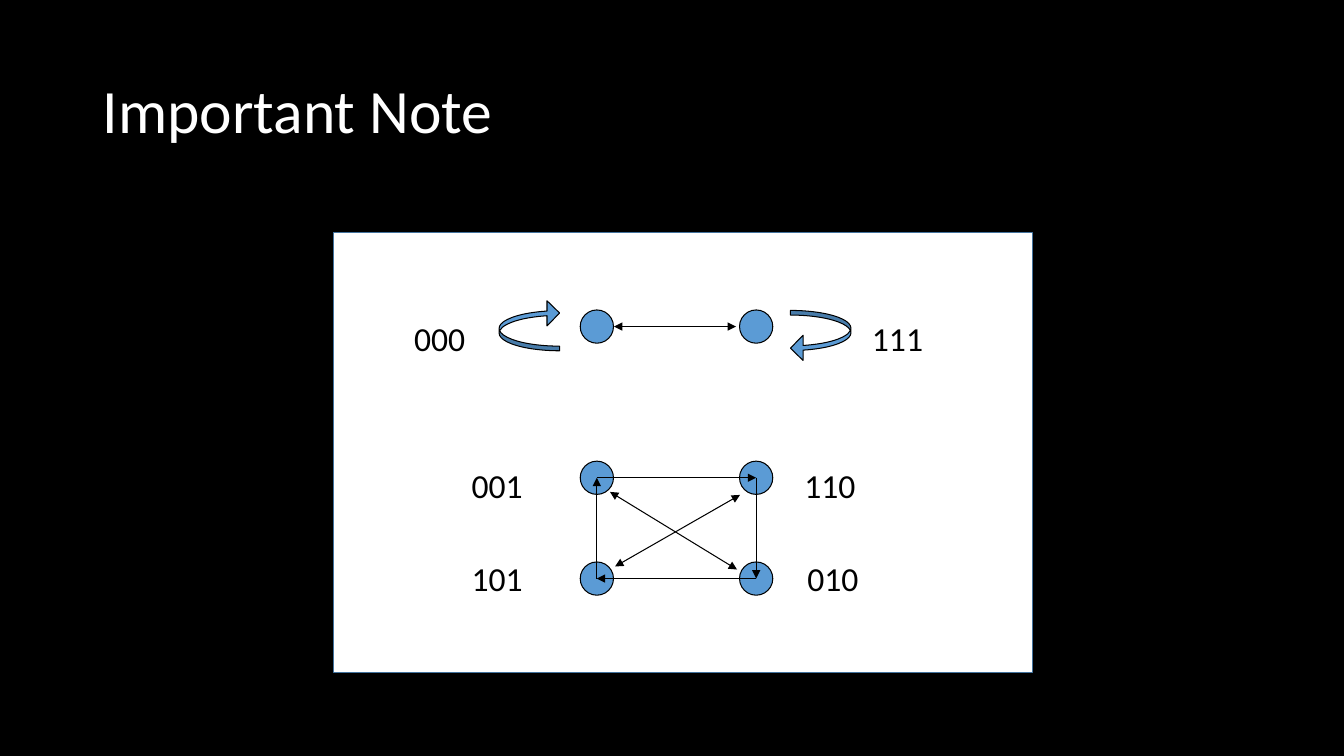
from dataclasses import dataclass

from lxml import etree
from pptx import Presentation
from pptx.dml.color import RGBColor
from pptx.enum.shapes import MSO_CONNECTOR, MSO_SHAPE
from pptx.enum.text import MSO_ANCHOR, PP_ALIGN
from pptx.oxml.ns import qn
from pptx.util import Inches, Pt

STRAIGHT = MSO_CONNECTOR.STRAIGHT
RECTANGLE = MSO_SHAPE.RECTANGLE
NODE = MSO_SHAPE.FLOWCHART_CONNECTOR
LOOP = MSO_SHAPE.CURVED_LEFT_ARROW
MIDDLE = MSO_ANCHOR.MIDDLE
LEFT = PP_ALIGN.LEFT
TITLE_ONLY = 5


@dataclass(frozen=True)
class Theme:
    font: str = "Calibri"
    black: RGBColor = RGBColor(0x00, 0x00, 0x00)
    white: RGBColor = RGBColor(0xFF, 0xFF, 0xFF)
    blue: RGBColor = RGBColor(0x5B, 0x9B, 0xD5)
    border: RGBColor = RGBColor(0x43, 0x73, 0x9E)
    title_size: float = 44
    label_size: float = 24
    thin: float = 0.75
    panel_line: float = 1


class StateSlide:
    """Draws a state-transition slide in one theme."""

    def __init__(self, prs, theme):
        self.theme = theme
        self.slide = prs.slides.add_slide(prs.slide_layouts[TITLE_ONLY])
        self.slide.background.fill.solid()
        self.slide.background.fill.fore_color.rgb = theme.black

    def set_text(self, tf, text, size, color):
        tf.word_wrap = True
        tf.text = text
        p = tf.paragraphs[0]
        p.alignment = LEFT
        font = p.runs[0].font
        font.name, font.size, font.color.rgb = self.theme.font, Pt(size), color
        return p

    def title(self, text, *box):
        s = self.slide.shapes.title
        s.left, s.top, s.width, s.height = map(Inches, box)
        s.text_frame.vertical_anchor = MIDDLE
        p = self.set_text(s.text_frame, text, self.theme.title_size, self.theme.white)
        p.line_spacing = 0.9

    def shape(self, kind, box, fill, line, width):
        s = self.slide.shapes.add_shape(kind, *map(Inches, box))
        s.shadow.inherit = False
        s.fill.solid()
        s.fill.fore_color.rgb = fill
        s.line.color.rgb = line
        s.line.width = Pt(width)
        return s

    def panel(self, *box):
        t = self.theme
        self.shape(RECTANGLE, box, t.white, t.border, t.panel_line)

    def node(self, x, y, size=0.33):
        t = self.theme
        box = (x - size / 2, y - size / 2, size, size)
        self.shape(NODE, box, t.blue, t.black, t.thin)

    def loop(self, left, top, rotation=0):
        t = self.theme
        s = self.shape(LOOP, (left, top, 0.6, 0.5), t.blue, t.black, t.thin)
        s.rotation = rotation
        for i, value in enumerate((0.093, 0.5, 0.25)):
            s.adjustments[i] = value

    def arrow(self, start, end, both=False):
        s = self.slide.shapes.add_connector(STRAIGHT, *map(Inches, start + end))
        s.line.color.rgb = self.theme.black
        s.line.width = Pt(self.theme.thin)
        spPr = s.element.spPr
        ln = spPr.find(qn("a:ln"))
        for tag in ("a:headEnd", "a:tailEnd") if both else ("a:tailEnd",):
            etree.SubElement(ln, qn(tag), type="triangle")
        etree.SubElement(spPr, qn("a:effectLst"))

    def label(self, text, left, top):
        s = self.slide.shapes.add_textbox(*map(Inches, (left, top, 0.98, 0.5)))
        self.set_text(s.text_frame, text, self.theme.label_size, self.theme.black)


def main():
    prs = Presentation()
    prs.slide_width, prs.slide_height = Inches(13.33), Inches(7.5)
    page = StateSlide(prs, Theme())
    page.title("Important Note", 0.92, 0.4, 11.5, 1.45)
    page.panel(3.31, 2.31, 6.93, 4.36)

    left, right = 5.92, 7.5
    loop_row, upper, lower = 3.24, 4.74, 5.74
    for y in (loop_row, upper, lower):
        for x in (left, right):
            page.node(x, y)

    cycle = [(left, upper), (right, upper), (right, lower), (left, lower)]
    for start, end in zip(cycle, cycle[1:] + cycle[:1]):
        page.arrow(start, end)

    two_way = [
        ((6.1, 5.62), (7.34, 4.91)),
        ((6.05, 4.88), (7.31, 5.65)),
        ((6.09, loop_row), (7.3, loop_row)),
    ]
    for start, end in two_way:
        page.arrow(start, end, both=True)

    page.loop(4.95, 2.98, rotation=180)
    page.loop(7.84, 3.08)

    labels = [
        ("000", 4.01, 3.1), ("111", 8.55, 3.1),
        ("001", 4.58, 4.56), ("110", 7.88, 4.56),
        ("101", 4.58, 5.49), ("010", 7.91, 5.49),
    ]
    for text, x, y in labels:
        page.label(text, x, y)

    prs.save("out.pptx")


if __name__ == "__main__":
    main()
